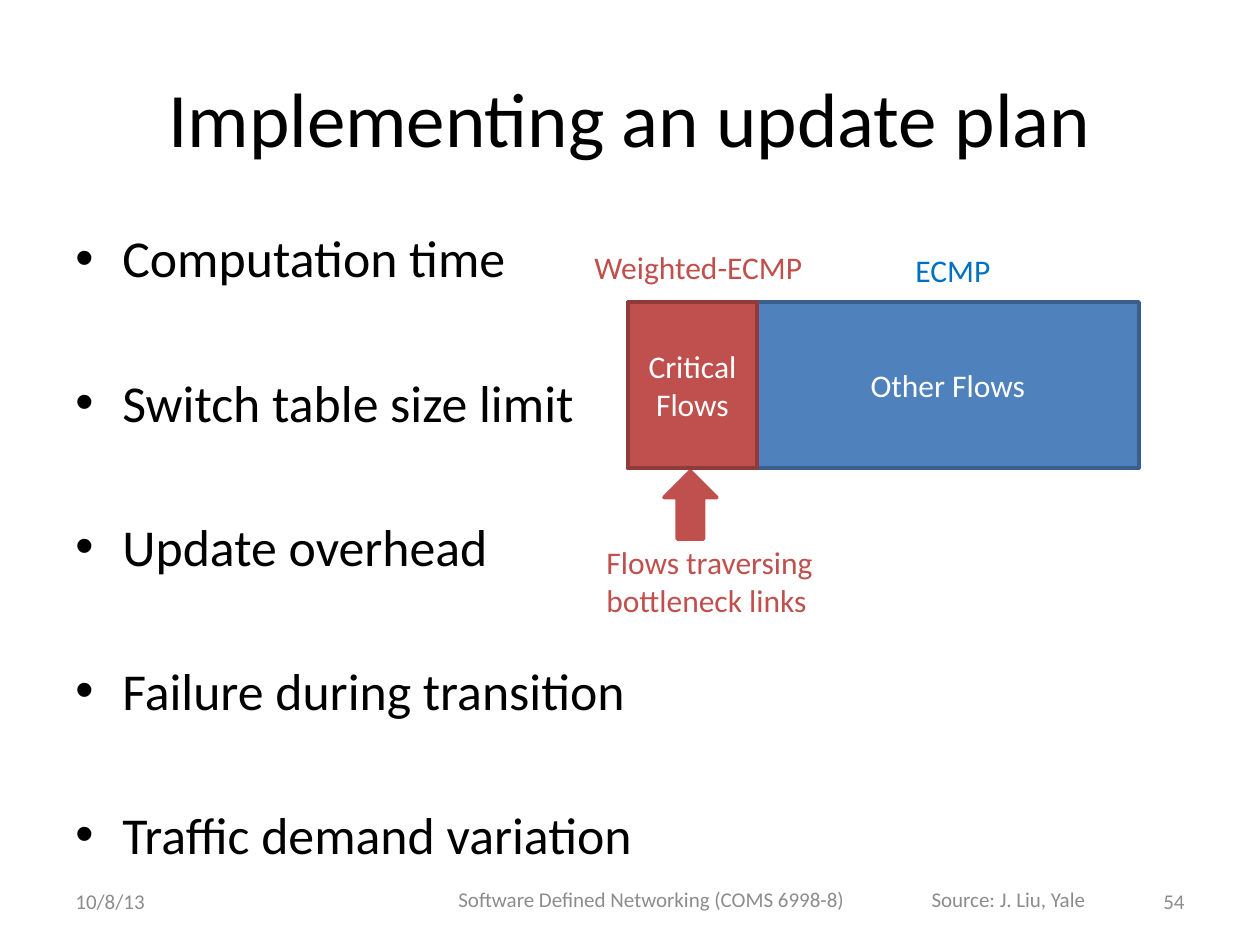
from lxml import etree
from pptx import Presentation
from pptx import util as u
from pptx.dml.color import RGBColor
from pptx.enum import shapes, text
from pptx.oxml.ns import qn

PX_PER_INCH = 126
FONT = "Calibri"
BLACK = RGBColor(0x00, 0x00, 0x00)
WHITE = RGBColor(0xFF, 0xFF, 0xFF)
GRAY = RGBColor(0x8C, 0x8C, 0x8C)
BLUE = RGBColor(0x4F, 0x81, 0xBD)
DARK_BLUE = RGBColor(0x3A, 0x5F, 0x8C)
LABEL_BLUE = RGBColor(0x00, 0x70, 0xC0)
RED = RGBColor(0xC0, 0x50, 0x4D)
DARK_RED = RGBColor(0x8E, 0x3B, 0x39)

LEFT, CENTER, RIGHT = text.PP_ALIGN.LEFT, text.PP_ALIGN.CENTER, text.PP_ALIGN.RIGHT
TOP, MIDDLE = text.MSO_ANCHOR.TOP, text.MSO_ANCHOR.MIDDLE


def px(value):
    return u.Emu(round(value * u.Inches(1) / PX_PER_INCH))


def write(shape, lines, size, color, align, anchor):
    """Fill a shape with one paragraph per line."""
    frame = shape.text_frame
    frame.word_wrap = True
    frame.vertical_anchor = anchor
    for index, line in enumerate(lines):
        paragraph = frame.add_paragraph() if index else frame.paragraphs[0]
        paragraph.alignment = align
        run = paragraph.add_run()
        run.text = line
        run.font.name = FONT
        run.font.size = u.Pt(size)
        run.font.color.rgb = color


def add_text(slide, box, lines, size, color, align=LEFT, anchor=TOP):
    shape = slide.shapes.add_textbox(*map(px, box))
    write(shape, lines, size, color, align, anchor)
    return shape


def add_bullets(slide, box, lines, size, gap, indent):
    shape = add_text(slide, box, lines, size, BLACK)
    for paragraph in shape.text_frame.paragraphs:
        paragraph.space_after = u.Pt(gap)
        properties = paragraph._p.get_or_add_pPr()
        properties.set("marL", str(px(indent)))
        properties.set("indent", str(-px(indent)))
        etree.SubElement(properties, qn("a:buFont"), typeface="Arial")
        etree.SubElement(properties, qn("a:buChar"), char="•")


def add_block(slide, kind, box, fill, line, lines=()):
    shape = slide.shapes.add_shape(kind, *map(px, box))
    shape.shadow.inherit = False
    shape.fill.solid()
    shape.fill.fore_color.rgb = fill
    shape.line.color.rgb = line
    shape.line.width = u.Pt(2)
    write(shape, lines, 18, WHITE, CENTER, MIDDLE)
    return shape


def main():
    presentation = Presentation()
    presentation.slide_width, presentation.slide_height = u.Inches(10), u.Inches(7.5)
    slide = presentation.slides.add_slide(presentation.slide_layouts[6])

    # Title and bullets
    add_text(slide, (63, 38, 1134, 158), ["Implementing an update plan"],
             44, BLACK, CENTER, MIDDLE)
    topics = ["Computation time", "Switch table size limit", "Update overhead",
              "Failure during transition", "Traffic demand variation"]
    add_bullets(slide, (63, 220, 1134, 624), topics, 29.6, gap=46.8, indent=47)

    # Flow bar: the critical part covers the left end of the whole bar
    rectangle = shapes.MSO_SHAPE.RECTANGLE
    bar_left, bar_top, bar_height, critical_width = 628, 302, 166, 129
    other = add_block(slide, rectangle, (bar_left, bar_top, 511, bar_height),
                      BLUE, DARK_BLUE, ["Other Flows"])
    other.text_frame.margin_left = px(critical_width + 12)
    add_block(slide, rectangle, (bar_left, bar_top, critical_width, bar_height),
              RED, DARK_RED, ["Critical", "Flows"])
    add_block(slide, shapes.MSO_SHAPE.UP_ARROW, (664, 471, 53, 68), RED, RED)

    # Labels around the bar
    for box, label, color in [
        ((582, 242, 273, 50), "Weighted-ECMP", RED),
        ((903, 245, 129, 50), "ECMP", LABEL_BLUE),
        ((594, 537, 273, 89), "Flows traversing bottleneck links", RED),
    ]:
        add_text(slide, box, [label], 18, color)

    # Footer
    for box, label, align in [
        ((63, 876, 294, 50), "10/8/13", LEFT),
        ((431, 872, 441, 54), "Software Defined Networking (COMS 6998-8)", CENTER),
        ((788, 872, 441, 54), "Source: J. Liu, Yale", CENTER),
        ((903, 876, 294, 50), "54", RIGHT),
    ]:
        add_text(slide, box, [label], 12, GRAY, align, MIDDLE)

    presentation.save("out.pptx")


if __name__ == "__main__":
    main()
